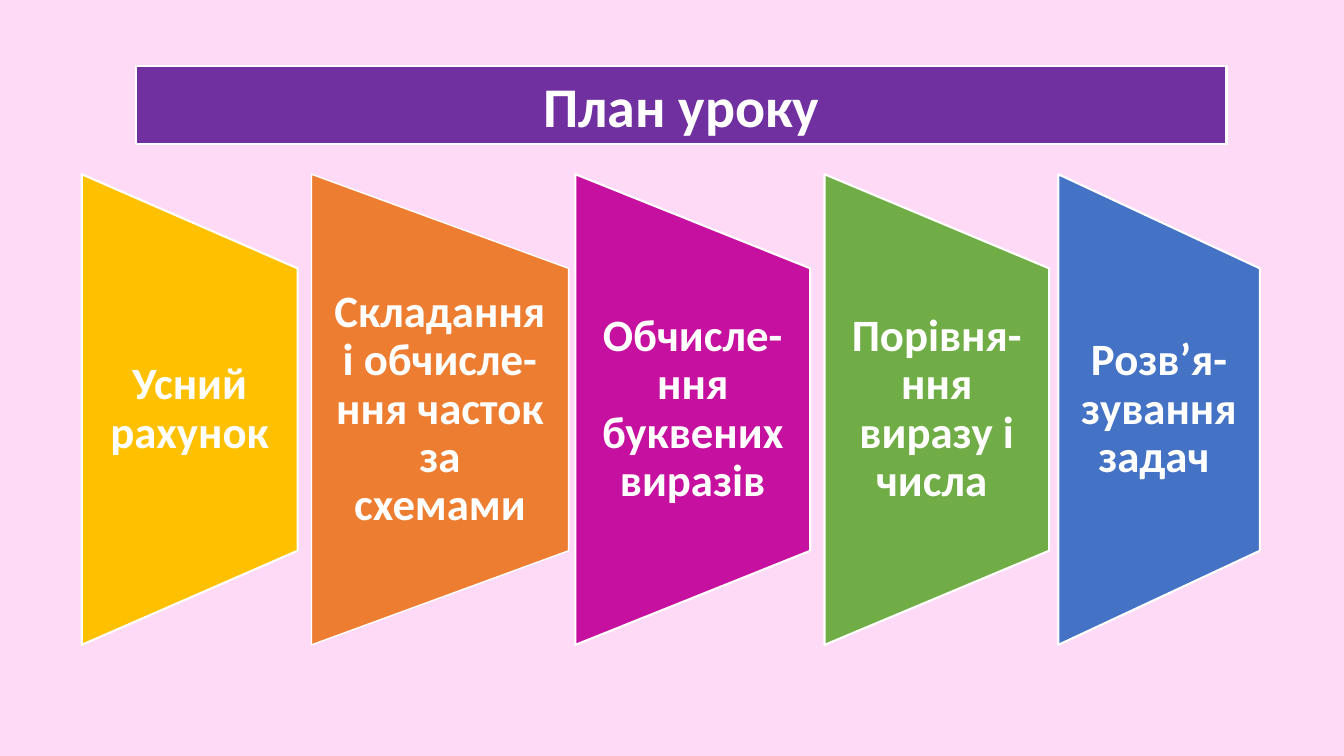
from dataclasses import dataclass

from pptx import Presentation
from pptx.dml.color import RGBColor
from pptx.enum.shapes import MSO_SHAPE
from pptx.enum.text import MSO_ANCHOR, PP_ALIGN
from pptx.util import Cm, Pt

RECT = MSO_SHAPE.RECTANGLE
TRAP = MSO_SHAPE.FLOWCHART_MANUAL_OPERATION
MID = MSO_ANCHOR.MIDDLE
CENTER = PP_ALIGN.CENTER


@dataclass(frozen=True)
class Theme:
    """Colours, font and type sizes of the slide."""
    back: str = "FEDAF6"
    bar: str = "7030A0"
    white: str = "FFFFFF"
    font: str = "Calibri"
    head: int = 40
    body: int = 32


THEME = Theme()

STEPS = [
    (2.06, 5.44, "FFC000", 1.5, "Усний рахунок"),
    (7.85, 6.48, "ED7D31", 1, "Складання і обчисле-\nння часток за схемами"),
    (14.5, 5.92, "C6109F", 1.5, "Обчисле-ння буквених виразів"),
    (20.78, 5.66, "70AD47", 1.5, "Порівня-ння виразу і числа "),
    (26.67, 5.08, "4472C4", 1.5, "Розв’я-зування задач "),
]


def paint(shape, fill, width):
    """Give a shape a flat fill and a white outline."""
    shape.shadow.inherit = False
    shape.fill.solid()
    shape.fill.fore_color.rgb = RGBColor.from_string(fill)
    shape.line.color.rgb = RGBColor.from_string(THEME.white)
    shape.line.width = Pt(width)


def write(shape, text, size, space=None):
    """Set bold white centred text in a shape."""
    frame = shape.text_frame
    frame.word_wrap = True
    frame.vertical_anchor = MID
    frame.text = text
    for para in frame.paragraphs:
        para.alignment = CENTER
        para.line_spacing = space
        for run in para.runs:
            run.font.name = THEME.font
            run.font.size = Pt(size)
            run.font.bold = True
            run.font.color.rgb = RGBColor.from_string(THEME.white)


def add_title(slide, left, top, width, height):
    """Draw the title bar in the given box."""
    bar = slide.shapes.add_shape(RECT, Cm(left), Cm(top), Cm(width), Cm(height))
    paint(bar, THEME.bar, 1.5)
    write(bar, "План уроку", THEME.head)


def add_step(slide, left, top, width, height, fill, line, text):
    """Draw one step: a trapezoid turned to the right and its label."""
    shift = (height - width) / 2
    trap = slide.shapes.add_shape(
        TRAP, Cm(left - shift), Cm(top + shift), Cm(height), Cm(width))
    trap.rotation = 270
    paint(trap, fill, line)
    label = slide.shapes.add_textbox(
        Cm(left), Cm(top + height / 5), Cm(width), Cm(height * 3 / 5))
    frame = label.text_frame
    frame.margin_left = frame.margin_right = Cm(0.56)
    frame.margin_top = frame.margin_bottom = 0
    write(label, text, THEME.body, 0.9)


def add_plan(slide, top, height):
    """Draw all steps of the lesson in one row."""
    for left, width, fill, line, text in STEPS:
        add_step(slide, left, top, width, height, fill, line, text)


def main():
    """Build and save the slide."""
    deck = Presentation()
    deck.slide_width, deck.slide_height = Cm(33.87), Cm(19.05)
    slide = deck.slides.add_slide(deck.slide_layouts[6])
    back = slide.background.fill
    back.solid()
    back.fore_color.rgb = RGBColor.from_string(THEME.back)
    add_title(slide, 3.43, 1.67, 27.48, 1.96)
    add_plan(slide, 4.39, 11.86)
    deck.save("out.pptx")


if __name__ == "__main__":
    main()
